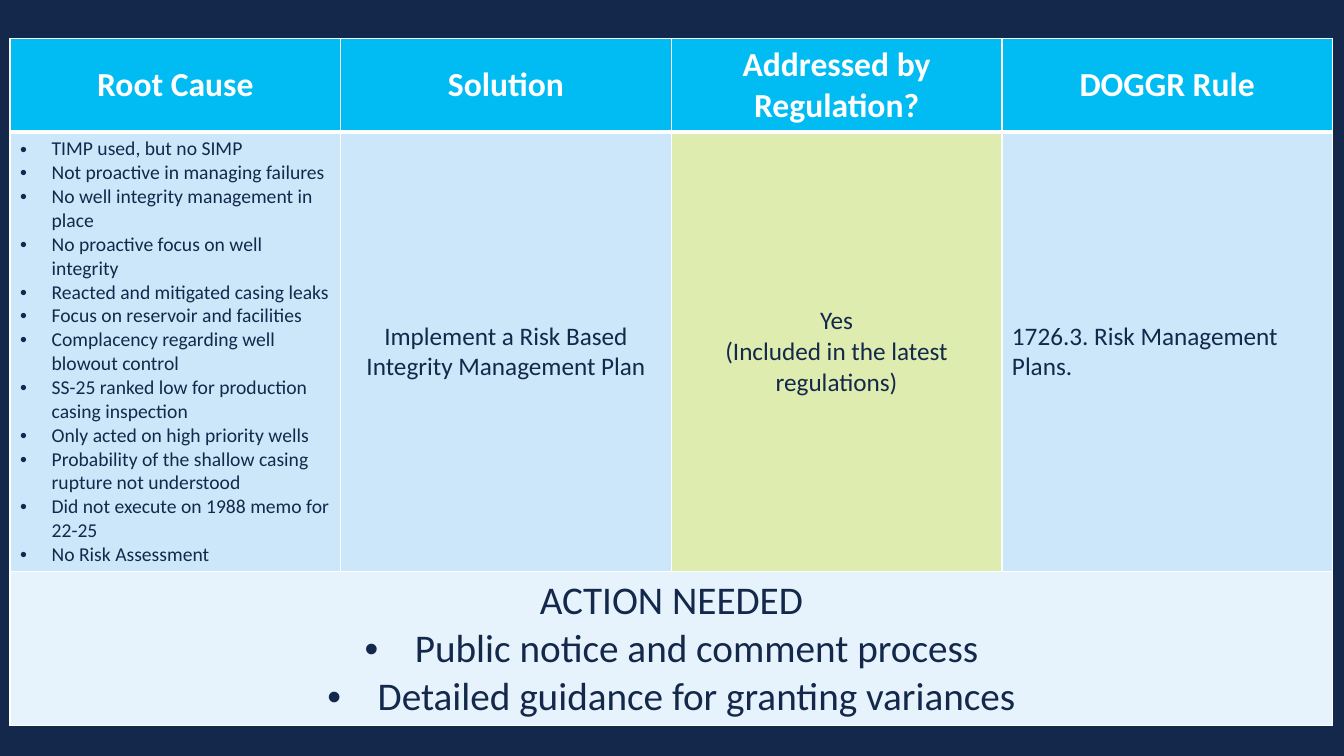
import pptx
import pptx.util
import pptx.dml.color
import pptx.enum.text
import pptx.oxml
import pptx.oxml.ns
import lxml.etree

Pt = pptx.util.Pt
ALIGN = pptx.enum.text.PP_ALIGN

COLORS = {
    "navy": "14284B",
    "white": "FFFFFF",
    "cyan": "00BCF2",
    "sky": "CCE7FA",
    "green": "DEECAF",
    "pale": "E7F3FC",
}

HEADERS = ["Root Cause", "Solution", "Addressed by Regulation?", "DOGGR Rule"]
CAUSES = [
    "TIMP used, but no SIMP",
    "Not proactive in managing failures",
    "No well integrity management in place",
    "No proactive focus on well integrity",
    "Reacted and mitigated casing leaks",
    "Focus on reservoir and facilities",
    "Complacency regarding well blowout control",
    "SS-25 ranked low for production casing inspection",
    "Only acted on high priority wells",
    "Probability of the shallow casing rupture not understood",
    "Did not execute on 1988 memo for 22-25",
    "No Risk Assessment",
]
SOLUTION = ["Implement a Risk Based Integrity Management Plan"]
ADDRESSED = ["Yes", "(Included in the latest regulations)"]
RULE = ["1726.3. Risk Management Plans."]
ACTION_TITLE = "ACTION NEEDED"
ACTIONS = [
    "Public notice and comment process",
    "Detailed guidance for granting variances",
]

SLIDE_W, SLIDE_H = 960, 540
LEFT, TOP, WIDTH = 7.2, 27.4, 944.64
ROW_HEIGHTS = [67, 314, 110]
CAUSE_INDENT, ACTION_INDENT = 22.5, 36
THIN, THICK = 1, 3

HEAD = {"size": Pt(24), "bold": True}
CAUSE = {"size": Pt(14), "bold": False}
BODY = {"size": Pt(18), "bold": False}
ACTION = {"size": Pt(28), "bold": False}


def rgb(name):
    return pptx.dml.color.RGBColor.from_string(COLORS[name])


def plain(lines, indent=0):
    return [(line, indent) for line in lines]


def set_bullet(p, indent):
    pPr = p._p.get_or_add_pPr()
    pPr.set("marL", str(Pt(indent)))
    pPr.set("indent", str(-Pt(indent)))
    font = lxml.etree.SubElement(pPr, pptx.oxml.ns.qn("a:buFont"))
    font.set("typeface", "Arial")
    lxml.etree.SubElement(pPr, pptx.oxml.ns.qn("a:buChar")).set("char", "•")


def set_borders(cell, top, bottom):
    tcPr = cell._tc.get_or_add_tcPr()
    sides = {"lnL": THIN, "lnR": THIN, "lnT": top, "lnB": bottom}
    for i, (side, width) in enumerate(sides.items()):
        ln = pptx.oxml.parse_xml(
            f'<a:{side} {pptx.oxml.ns.nsdecls("a")} w="{Pt(width)}"><a:solidFill>'
            f'<a:srgbClr val="{COLORS["white"]}"/></a:solidFill></a:{side}>'
        )
        tcPr.insert(i, ln)


def write_cell(cell, lines, style, color, align):
    tf = cell.text_frame
    for i, (text, indent) in enumerate(lines):
        p = tf.paragraphs[0] if i == 0 else tf.add_paragraph()
        p.alignment = align
        if indent:
            set_bullet(p, indent)
        r = p.add_run()
        r.text = text
        for name, value in {"name": "Calibri", **style}.items():
            setattr(r.font, name, value)
        r.font.color.rgb = rgb(color)


def main():
    prs = pptx.Presentation()
    prs.slide_width, prs.slide_height = Pt(SLIDE_W), Pt(SLIDE_H)
    s = prs.slides.add_slide(prs.slide_layouts[6])
    s.background.fill.solid()
    s.background.fill.fore_color.rgb = rgb("navy")

    n_rows, n_cols = len(ROW_HEIGHTS), len(HEADERS)
    table = s.shapes.add_table(
        n_rows, n_cols, Pt(LEFT), Pt(TOP), Pt(WIDTH), Pt(sum(ROW_HEIGHTS))
    ).table
    for col in table.columns:
        col.width = Pt(WIDTH / n_cols)
    for row, height in zip(table.rows, ROW_HEIGHTS):
        row.height = Pt(height)
    table.cell(2, 0).merge(table.cell(2, n_cols - 1))

    fills = [["cyan"] * n_cols, ["sky", "sky", "green", "sky"], ["pale"] * n_cols]
    for i, row_fills in enumerate(fills):
        for j, fill in enumerate(row_fills):
            cell = table.cell(i, j)
            cell.vertical_anchor = pptx.enum.text.MSO_ANCHOR.MIDDLE
            cell.fill.solid()
            cell.fill.fore_color.rgb = rgb(fill)
            set_borders(cell, THICK if i == 1 else THIN, THICK if i == 0 else THIN)

    for j, header in enumerate(HEADERS):
        write_cell(table.cell(0, j), plain([header]), HEAD, "white", ALIGN.CENTER)
    body = [
        (1, 0, plain(CAUSES, CAUSE_INDENT), CAUSE, ALIGN.LEFT),
        (1, 1, plain(SOLUTION), BODY, ALIGN.CENTER),
        (1, 2, plain(ADDRESSED), BODY, ALIGN.CENTER),
        (1, 3, plain(RULE), BODY, ALIGN.LEFT),
        (2, 0, plain([ACTION_TITLE]) + plain(ACTIONS, ACTION_INDENT), ACTION, ALIGN.CENTER),
    ]
    for i, j, lines, style, align in body:
        write_cell(table.cell(i, j), lines, style, "navy", align)

    prs.save("out.pptx")


if __name__ == "__main__":
    main()
